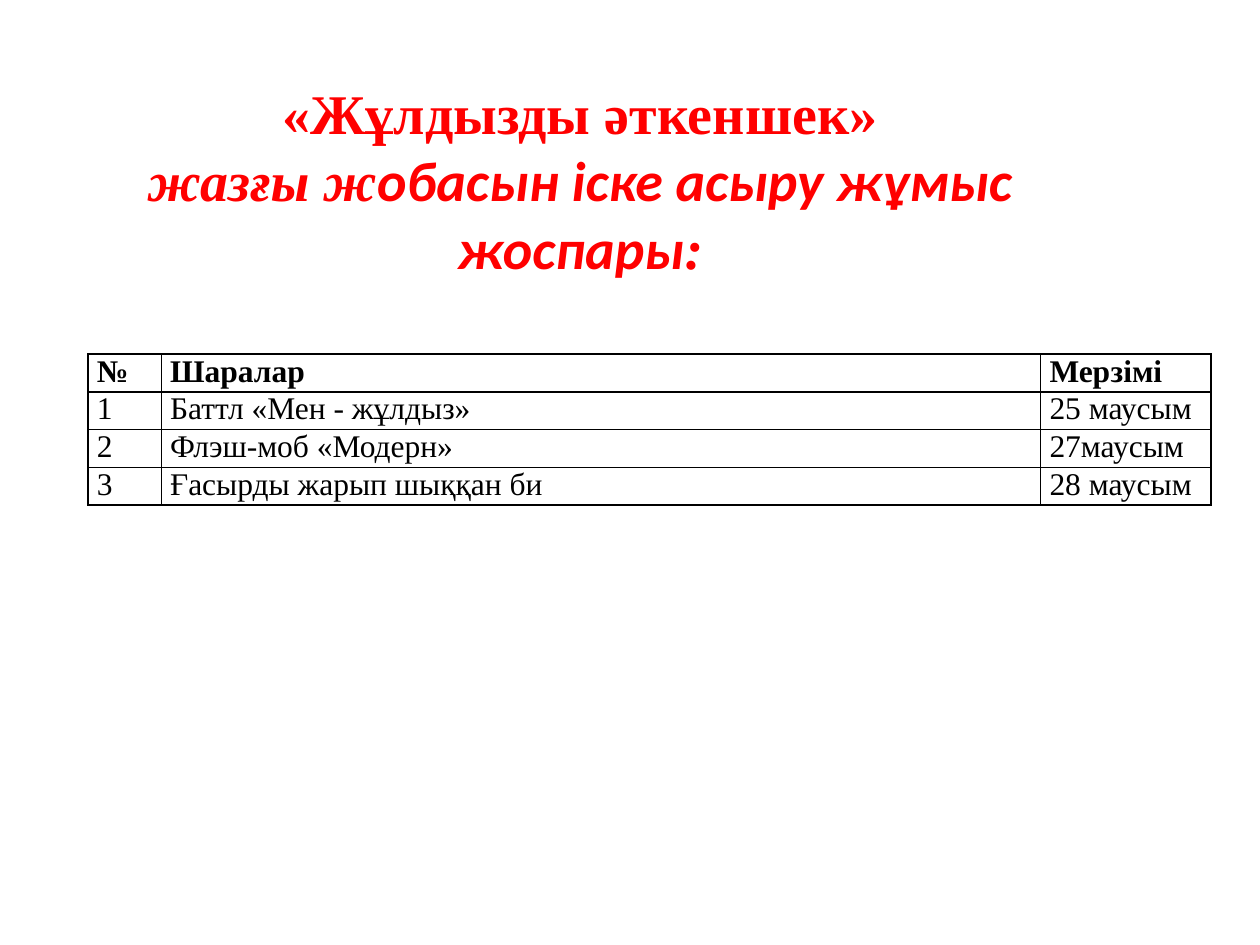
from lxml import etree
from pptx import Presentation
from pptx import util as u
from pptx.dml.color import RGBColor
from pptx.enum import text
from pptx.oxml.ns import qn

SERIF = "Times New Roman"
SANS = "Calibri"
RED = "FF0000"
BLACK = "000000"
ROWS = [
    ("№", "Шаралар", "Мерзімі"),
    ("1", "Баттл «Мен - жұлдыз»", "25 маусым"),
    ("2", "Флэш-моб «Модерн»", "27маусым"),
    ("3", "Ғасырды жарып шыққан би", "28 маусым"),
]


def color(value):
    """Turn a hex string into a colour."""
    return RGBColor.from_string(value)


def add_text(paragraph, wording, size=18, font=SERIF, fill=BLACK, bold=False, italic=False):
    """Append one formatted run to a paragraph."""
    run = paragraph.add_run()
    run.text = wording
    run.font.size = u.Pt(size)
    run.font.name = font
    run.font.bold = bold
    run.font.italic = italic
    run.font.color.rgb = color(fill)


def set_borders(cell, line=BLACK, width=1):
    """Draw a solid line on all four sides of a cell."""
    properties = cell._tc.get_or_add_tcPr()
    for position, side in enumerate(("a:lnL", "a:lnR", "a:lnT", "a:lnB")):
        border = etree.Element(qn(side), w=str(u.Pt(width)))
        solid = etree.SubElement(border, qn("a:solidFill"))
        etree.SubElement(solid, qn("a:srgbClr"), val=line)
        properties.insert(position, border)


def add_heading(slide, left, top, width, height):
    """Place the project title, with one free line below it."""
    frame = slide.shapes.add_textbox(left, top, width, height).text_frame
    frame.word_wrap = True
    frame.vertical_anchor = text.MSO_ANCHOR.MIDDLE
    frame.margin_bottom = u.Inches(0.56)
    project = frame.paragraphs[0]
    plan = frame.add_paragraph()
    for paragraph in (project, plan):
        paragraph.alignment = text.PP_ALIGN.CENTER
    style = {"size": 32, "fill": RED, "bold": True}
    add_text(project, "«Жұлдызды әткеншек»", **style)
    for wording, font in (
        ("жазғы ж", SERIF),
        ("обасын іске асыру жұмыс жоспары", SANS),
        (":", SERIF),
    ):
        add_text(plan, wording, font=font, italic=True, **style)


def add_schedule(slide, left, top, width, height):
    """Place the table of events and dates."""
    schedule = slide.shapes.add_table(len(ROWS), len(ROWS[0]), left, top, width, height).table
    number_width, date_width = u.Inches(0.58), u.Inches(1.35)
    widths = (number_width, width - number_width - date_width, date_width)
    for column, column_width in zip(schedule.columns, widths):
        column.width = column_width
    for row_index, entries in enumerate(ROWS):
        for column_index, entry in enumerate(entries):
            cell = schedule.cell(row_index, column_index)
            cell.margin_left = cell.margin_right = u.Inches(0.07)
            cell.margin_top = cell.margin_bottom = 0
            cell.fill.background()
            set_borders(cell)
            paragraph = cell.text_frame.paragraphs[0]
            paragraph.alignment = text.PP_ALIGN.JUSTIFY
            add_text(paragraph, entry, bold=row_index == 0)


def main():
    """Build and save the slide."""
    deck = Presentation()
    deck.slide_width, deck.slide_height = u.Inches(10), u.Inches(7.5)
    slide = deck.slides.add_slide(deck.slide_layouts[6])
    add_schedule(slide, u.Inches(0.7), u.Inches(2.81), u.Inches(8.91), u.Inches(1.2))
    add_heading(slide, u.Inches(0.23), u.Inches(0.55), u.Inches(8.75), u.Inches(2.26))
    deck.save("out.pptx")


if __name__ == "__main__":
    main()
